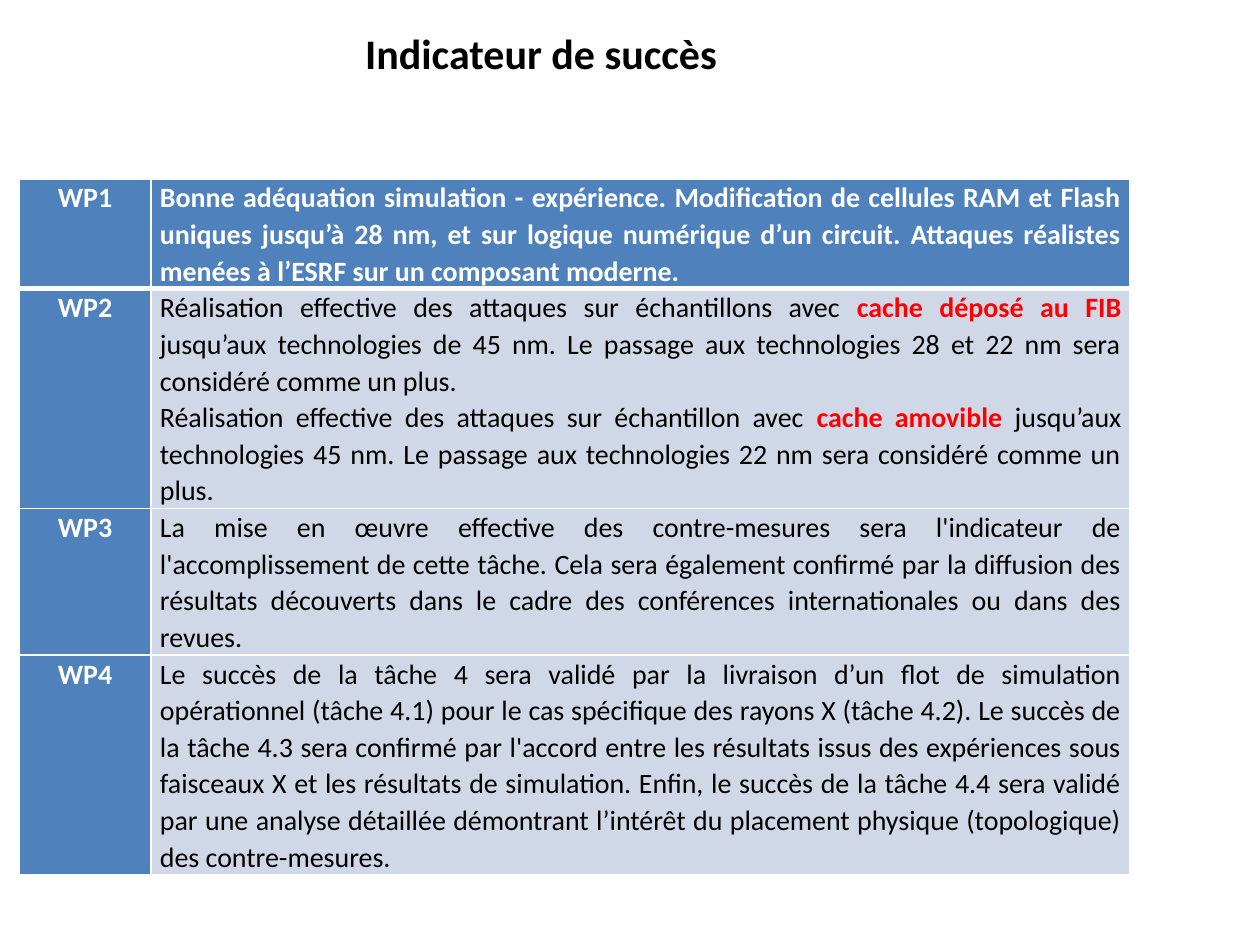
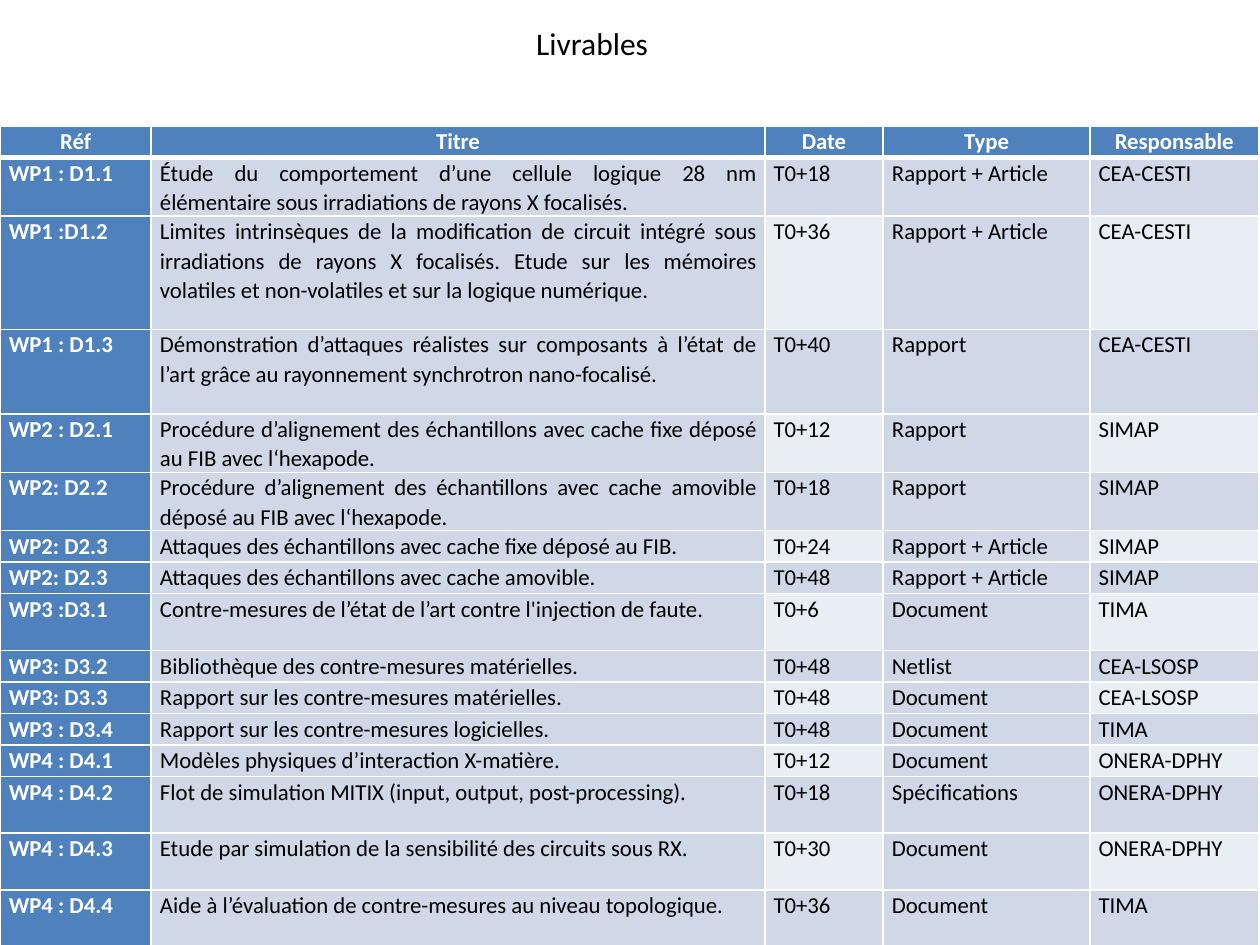
from itertools import product

from lxml.etree import SubElement
from pptx import Presentation
from pptx.dml.color import RGBColor
from pptx.enum.text import MSO_AUTO_SIZE, PP_ALIGN
from pptx.oxml.ns import qn
from pptx.util import Inches, Pt

# Shared look
COLORS = {
    "header": "4F81BD",
    "band": "D0D8E8",
    "light_band": "E9EDF4",
    "paper": "FFFFFF",
    "ink": "000000",
    "accent": "FF0000",
}
FONT = "Calibri"
LINE_SPACING = 1.07
THIN_BORDER, THICK_BORDER = 1, 3
CELL_MARGINS = {
    "margin_left": Inches(0.07),
    "margin_right": Inches(0.07),
    "margin_top": 0,
    "margin_bottom": 0,
}

# Slide grid: 200 columns by 150 rows of square units
PAGE_WIDTH, PAGE_HEIGHT = Inches(10), Inches(7.5)
UNIT = PAGE_WIDTH / 200

# Success indicators: a cell is a list of paragraphs, a paragraph a list of (text, style)
INDICATORS = [
    ("WP1", [[("Bonne adéquation simulation - expérience. Modification de cellules RAM et Flash "
               "uniques jusqu’à 28 nm, et sur logique numérique d’un circuit. Attaques réalistes "
               "menées à l’ESRF sur un composant moderne.", "header")]]),
    ("WP2", [[("Réalisation effective des attaques sur échantillons avec ", "body"),
              ("cache déposé au FIB ", "accent"),
              ("jusqu’aux technologies de 45 nm. Le passage aux technologies 28 et 22 nm sera "
               "considéré comme un plus.", "body")],
             [("Réalisation effective des attaques sur échantillon avec ", "body"),
              ("cache amovible ", "accent"),
              ("jusqu’aux technologies 45 nm. Le passage aux technologies 22 nm sera considéré "
               "comme un plus.", "body")]]),
    ("WP3", [[("La mise en œuvre effective des contre-mesures sera l'indicateur de "
               "l'accomplissement de cette tâche. Cela sera également confirmé par la diffusion "
               "des résultats découverts dans le cadre des conférences internationales ou dans "
               "des revues.", "body")]]),
    ("WP4", [[("Le succès de la tâche 4 sera validé par la livraison d’un flot de simulation "
               "opérationnel (tâche 4.1) pour le cas spécifique des rayons X (tâche 4.2). Le "
               "succès de la tâche 4.3 sera confirmé par l'accord entre les résultats issus des "
               "expériences sous faisceaux X et les résultats de simulation. Enfin, le succès de "
               "la tâche 4.4 sera validé par une analyse détaillée démontrant l’intérêt du "
               "placement physique (topologique) des contre-mesures.", "body")]]),
]
INDICATOR_ROWS = (16.8, 25, 18.8, 31.4)

# Deliverables
DELIVERABLES = [
    ("Réf", "Titre", "Date", "Type", "Responsable"),
    ("WP1 : D1.1", "Étude du comportement d’une cellule logique 28 nm élémentaire sous "
     "irradiations de rayons X focalisés.", "T0+18", "Rapport + Article", "CEA-CESTI"),
    ("WP1 :D1.2", "Limites intrinsèques de la modification de circuit intégré sous irradiations "
     "de rayons X focalisés. Etude sur les mémoires volatiles et non-volatiles et sur la logique "
     "numérique.", "T0+36", "Rapport + Article", "CEA-CESTI"),
    ("WP1 : D1.3", "Démonstration d’attaques réalistes sur composants à l’état de l’art grâce au "
     "rayonnement synchrotron nano-focalisé.", "T0+40", "Rapport", "CEA-CESTI"),
    ("WP2 : D2.1", "Procédure d’alignement des échantillons avec cache fixe déposé au FIB avec "
     "l‘hexapode.", "T0+12", "Rapport", "SIMAP"),
    ("WP2: D2.2", "Procédure d’alignement des échantillons avec cache amovible déposé au FIB avec "
     "l‘hexapode.", "T0+18", "Rapport", "SIMAP"),
    ("WP2: D2.3", "Attaques des échantillons avec cache fixe déposé au FIB.", "T0+24",
     "Rapport + Article", "SIMAP"),
    ("WP2: D2.3", "Attaques des échantillons avec cache amovible.", "T0+48",
     "Rapport + Article", "SIMAP"),
    ("WP3 :D3.1", "Contre-mesures de l’état de l’art contre l'injection de faute.", "T0+6",
     "Document", "TIMA"),
    ("WP3: D3.2", "Bibliothèque des contre-mesures matérielles.", "T0+48", "Netlist", "CEA-LSOSP"),
    ("WP3: D3.3", "Rapport sur les contre-mesures matérielles.", "T0+48", "Document", "CEA-LSOSP"),
    ("WP3 : D3.4", "Rapport sur les contre-mesures logicielles.", "T0+48", "Document", "TIMA"),
    ("WP4 : D4.1", "Modèles physiques d’interaction X-matière.", "T0+12", "Document",
     "ONERA-DPHY"),
    ("WP4 : D4.2", "Flot de simulation MITIX (input, output, post-processing).", "T0+18",
     "Spécifications", "ONERA-DPHY"),
    ("WP4 : D4.3", "Etude par simulation de la sensibilité des circuits sous RX.", "T0+30",
     "Document", "ONERA-DPHY"),
    ("WP4 : D4.4", "Aide à l’évaluation de contre-mesures au niveau topologique.", "T0+36",
     "Document", "TIMA"),
]
DELIVERABLE_ROWS = (5, 9, 18, 13.4, 9, 9, 5, 5, 9, 5, 5, 5, 5, 9, 9, 9)

# Text styles: colour name and weight
STYLES = {
    "header": ("paper", True),
    "body": ("ink", False),
    "accent": ("accent", True),
    "title": ("ink", True),
}


def grid(value):
    return round(value * UNIT)


def set_values(target, values):
    for name, value in values.items():
        setattr(target, name, value)


def paint(target, color):
    target.fill.solid()
    target.fill.fore_color.rgb = RGBColor.from_string(COLORS[color])


def write_paragraph(para, spans, size, align, spacing=None):
    set_values(para, {"alignment": align, "line_spacing": spacing})
    for text, style in spans:
        color, bold = STYLES[style]
        span = para.add_run()
        span.text = text
        set_values(span.font, {"name": FONT, "size": Pt(size), "bold": bold})
        span.font.color.rgb = RGBColor.from_string(COLORS[color])


def add_title(page, box, text, size, style, align):
    title = page.shapes.add_textbox(*map(grid, box))
    paint(title, "paper")
    frame = title.text_frame
    set_values(frame, {"word_wrap": True, "auto_size": MSO_AUTO_SIZE.SHAPE_TO_FIT_TEXT})
    write_paragraph(frame.paragraphs[0], [(text, style)], size, align)


def set_borders(cell, row):
    """White cell edges, thick between the header row and the body."""
    widths = {
        "a:lnL": THIN_BORDER,
        "a:lnR": THIN_BORDER,
        "a:lnT": THICK_BORDER if row == 1 else THIN_BORDER,
        "a:lnB": THICK_BORDER if row == 0 else THIN_BORDER,
    }
    properties = cell._tc.get_or_add_tcPr()
    for position, (tag, width) in enumerate(widths.items()):
        edge = SubElement(properties, qn(tag), w=str(Pt(width)))
        fill = SubElement(edge, qn("a:solidFill"))
        SubElement(fill, qn("a:srgbClr"), val=COLORS["paper"])
        properties.insert(position, edge)


def add_grid_table(page, box, columns, rows, size, cell_content):
    """cell_content(row, column) gives the fill, the alignment and the paragraphs."""
    frame = page.shapes.add_table(len(rows), len(columns), *map(grid, box))
    table = frame.table
    set_values(table, {"first_col": True, "horz_banding": False})
    for column, width in zip(table.columns, columns):
        column.width = grid(width)
    for row, height in zip(table.rows, rows):
        row.height = grid(height)
    frame.height = grid(box[3])

    for row, column in product(range(len(rows)), range(len(columns))):
        fill, align, paragraphs = cell_content(row, column)
        cell = table.cell(row, column)
        set_values(cell, CELL_MARGINS)
        paint(cell, fill)
        set_borders(cell, row)
        for index, spans in enumerate(paragraphs):
            text_frame = cell.text_frame
            para = text_frame.add_paragraph() if index else text_frame.paragraphs[0]
            write_paragraph(para, spans, size, align, LINE_SPACING)


def indicator_cell(row, column):
    package, paragraphs = INDICATORS[row]
    if column == 0:
        return "header", PP_ALIGN.CENTER, [[(package, "header")]]
    return "band" if row else "header", PP_ALIGN.JUSTIFY, paragraphs


def deliverable_cell(row, column):
    text = DELIVERABLES[row][column]
    align = PP_ALIGN.JUSTIFY if row else PP_ALIGN.CENTER
    if row == 0 or column == 0:
        return "header", align, [[(text, "header")]]
    # Date and manager columns alternate between two tints
    is_light = row % 2 == 0 and column in (2, 4)
    return "light_band" if is_light else "band", align, [[(text, "body")]]


def build_indicators(page):
    add_grid_table(page, (3, 28.4, 176.4, 108.4), (21, 155.4), INDICATOR_ROWS, 16, indicator_cell)
    add_title(page, (56, 3.4, 87.6, 10), "Indicateur de succès", 24, "title", PP_ALIGN.LEFT)


def build_deliverables(page):
    add_grid_table(page, (0, 20, 200, 130.4), (24, 97.4, 18.8, 32.8, 26.8), DELIVERABLE_ROWS,
                   13, deliverable_cell)
    add_title(page, (60.2, 2.8, 67.6, 8), "Livrables", 18, "body", PP_ALIGN.CENTER)


def main():
    deck = Presentation()
    set_values(deck, {"slide_width": PAGE_WIDTH, "slide_height": PAGE_HEIGHT})
    for build in (build_indicators, build_deliverables):
        build(deck.slides.add_slide(deck.slide_layouts[6]))
    deck.save("out.pptx")


if __name__ == "__main__":
    main()
